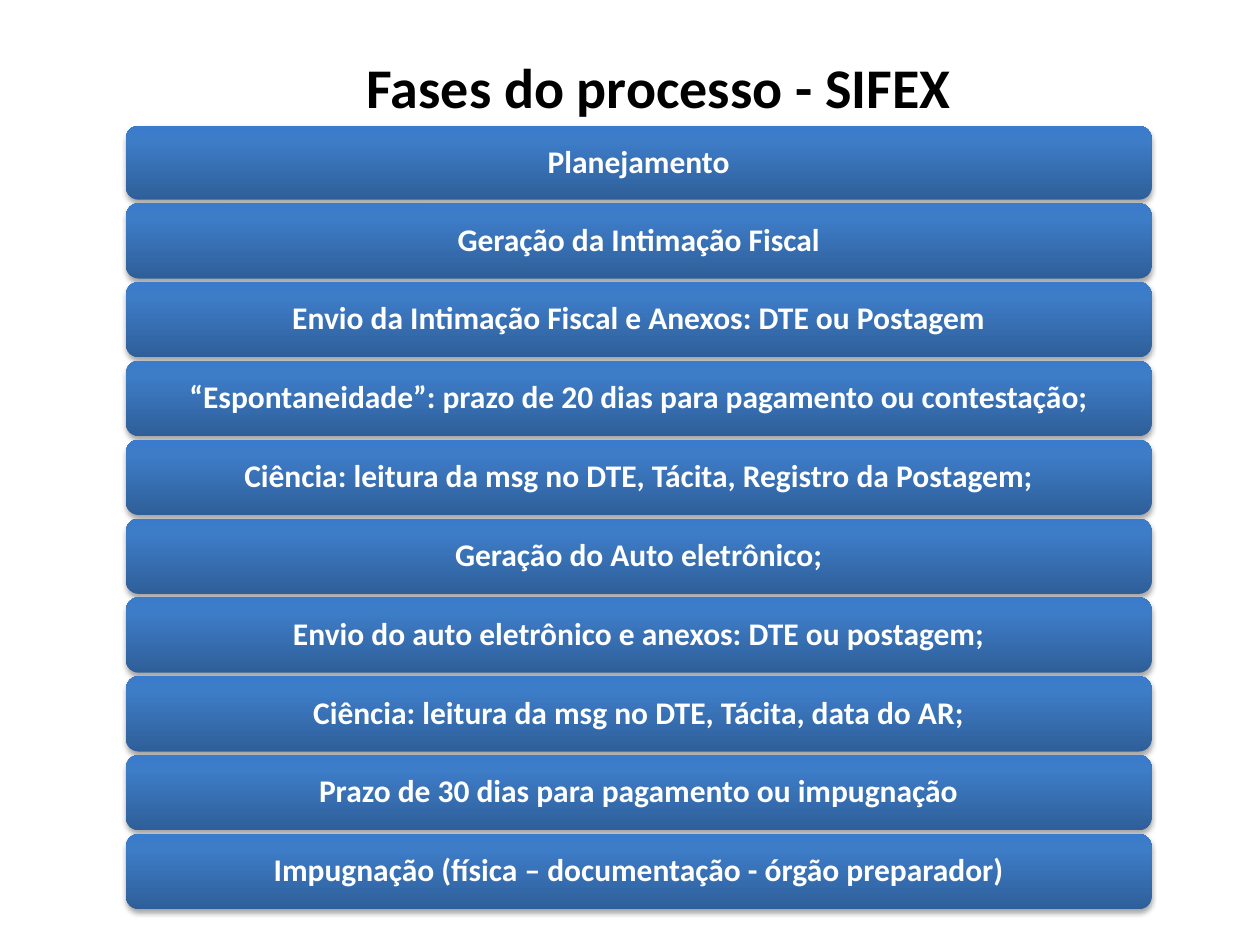
from lxml import etree
from pptx import Presentation
from pptx.dml.color import RGBColor
from pptx.enum.shapes import MSO_SHAPE as Shape
from pptx.enum.text import MSO_ANCHOR as Anchor, PP_ALIGN as Align
from pptx.oxml import parse_xml
from pptx.oxml.ns import nsdecls, qn
from pptx.util import Pt

BLACK = RGBColor(0x00, 0x00, 0x00)
WHITE = RGBColor(0xFF, 0xFF, 0xFF)
BAR_STOPS = [
    (0, RGBColor(0x2F, 0x5F, 0x99)),
    (80, RGBColor(0x3D, 0x7C, 0xC7)),
    (100, RGBColor(0x3A, 0x7C, 0xCB)),
]

PHASES = [
    "Planejamento",
    "Geração da Intimação Fiscal",
    "Envio da Intimação Fiscal e Anexos: DTE ou Postagem",
    "“Espontaneidade”: prazo de 20 dias para pagamento ou contestação;",
    "Ciência: leitura da msg no DTE, Tácita, Registro da Postagem;",
    "Geração do Auto eletrônico;",
    "Envio do auto eletrônico e anexos: DTE ou postagem;",
    "Ciência: leitura da msg no DTE, Tácita, data do AR;",
    "Prazo de 30 dias para pagamento ou impugnação",
    "Impugnação (física – documentação - órgão preparador)",
]
BAR_LEFT, BAR_WIDTH, BAR_HEIGHT = 72, 586, 43
FIRST_TOP, PITCH = 71.1, 45.05


def write_text(shape, text, size, color):
    frame = shape.text_frame
    frame.word_wrap = True
    frame.vertical_anchor = Anchor.MIDDLE
    frame.text = text
    paragraph = frame.paragraphs[0]
    paragraph.alignment = Align.CENTER
    font = paragraph.runs[0].font
    font.name, font.size, font.bold = "Calibri", Pt(size), True
    font.color.rgb = color
    return paragraph


def add_gradient_and_shadow(shape):
    stops = "".join(
        f'<a:gs pos="{position * 1000}"><a:srgbClr val="{color}"/></a:gs>'
        for position, color in BAR_STOPS
    )
    gradient = parse_xml(
        f'<a:gradFill {nsdecls("a")} rotWithShape="1"><a:gsLst>{stops}</a:gsLst>'
        '<a:lin ang="16200000" scaled="0"/></a:gradFill>'
    )
    properties = shape.element.spPr
    properties.find(qn("a:prstGeom")).addnext(gradient)

    shape.shadow.inherit = False
    shadow = etree.SubElement(
        properties.find(qn("a:effectLst")), qn("a:outerShdw"),
        blurRad=str(Pt(3.1)), dist=str(Pt(1.8)), dir="5400000", rotWithShape="0",
    )
    color = etree.SubElement(shadow, qn("a:srgbClr"), val=str(BLACK))
    etree.SubElement(color, qn("a:alpha"), val="35000")


presentation = Presentation()
presentation.slide_width, presentation.slide_height = Pt(720), Pt(540)
slide = presentation.slides.add_slide(presentation.slide_layouts[6])

# Title
title = slide.shapes.add_textbox(Pt(70.6), Pt(20.6), Pt(612), Pt(57))
write_text(title, "Fases do processo - SIFEX", 32, BLACK)

# One bar per phase; the first starts level with the left margin and is shorter
for index, phase in enumerate(PHASES):
    bottom = FIRST_TOP + index * PITCH + BAR_HEIGHT
    top = max(72, bottom - BAR_HEIGHT)
    bar = slide.shapes.add_shape(
        Shape.ROUNDED_RECTANGLE, Pt(BAR_LEFT), Pt(top), Pt(BAR_WIDTH), Pt(bottom - top)
    )
    bar.line.fill.background()
    add_gradient_and_shadow(bar)
    write_text(bar, phase, 18, WHITE).line_spacing = 0.9

presentation.save("out.pptx")
